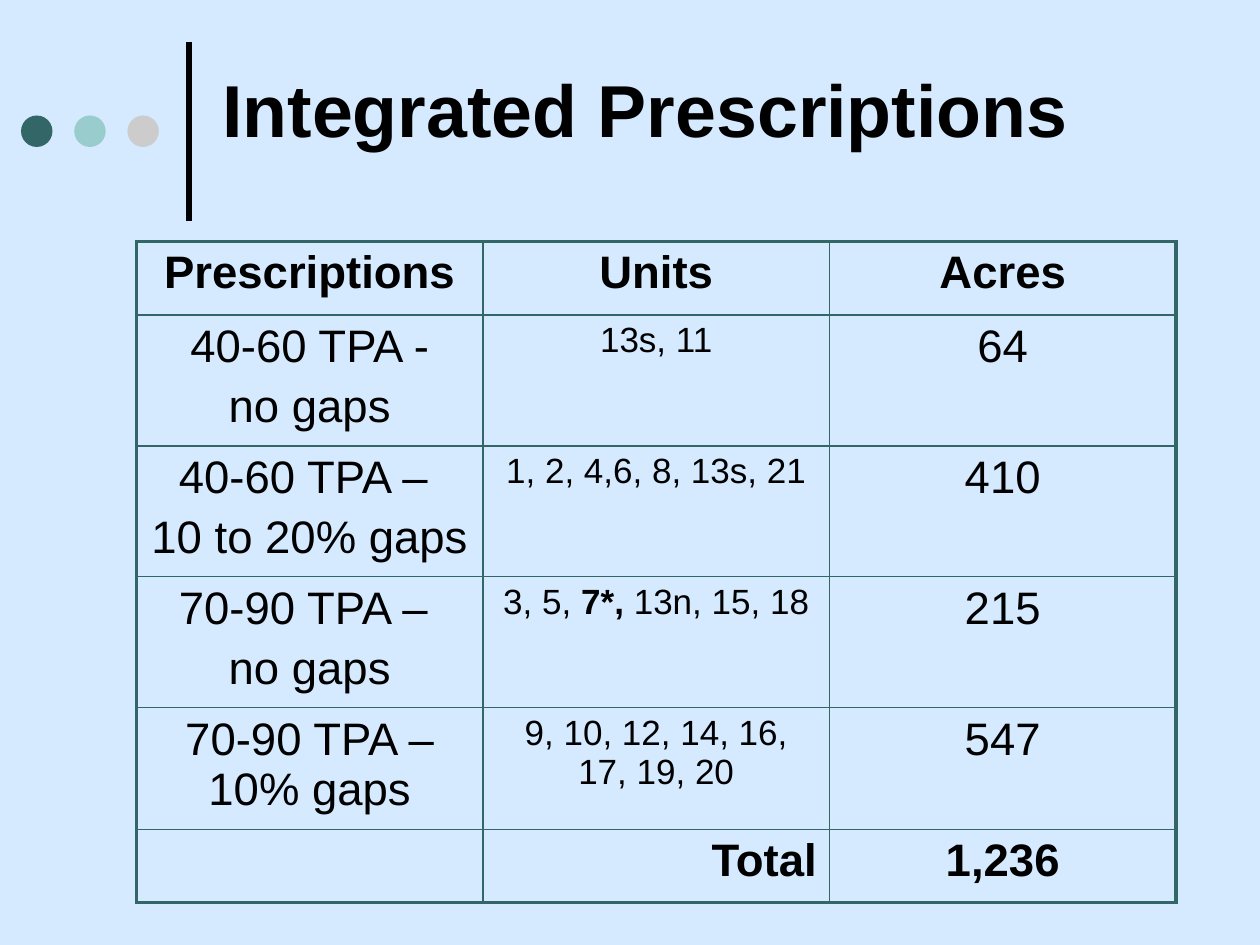
from typing import NamedTuple

from lxml.etree import SubElement
from pptx import Presentation
from pptx.dml.color import RGBColor
from pptx.enum.shapes import MSO_CONNECTOR, MSO_SHAPE
from pptx.enum.text import MSO_ANCHOR, PP_ALIGN
from pptx.oxml.ns import qn
from pptx.util import Pt

BLACK, TEAL, MINT, GREY, SKY = "000000", "336666", "99CCCC", "CCCCCC", "D5EAFF"
FONT = "Arial"
OUTER, INNER = 2.25, 1


class Run(NamedTuple):
    text: str
    bold: bool = False


class Cell(NamedTuple):
    paragraphs: list[list[Run]]
    size: float = 26
    align: PP_ALIGN = PP_ALIGN.CENTER


class Row(NamedTuple):
    height: float
    cells: list[Cell]


def label(*lines: str, bold: bool = False, align: PP_ALIGN = PP_ALIGN.CENTER) -> Cell:
    return Cell([[Run(line, bold)] for line in lines], align=align)


def units(*runs: Run) -> Cell:
    return Cell([list(runs)], size=20)


ROWS = [
    Row(42, [label(name, bold=True) for name in ("Prescriptions", "Units", "Acres")]),
    Row(54, [label("40-60 TPA -", "no gaps"), units(Run("13s, 11")), label("64")]),
    Row(54, [label("40-60 TPA – ", "10 to 20% gaps"),
             units(Run("1, 2, 4,6, 8, 13s, 21")), label("410")]),
    Row(54, [label("70-90 TPA – ", "no gaps"),
             units(Run("3, 5, "), Run("7*,", True), Run(" 13n, 15, 18")), label("215")]),
    Row(54, [label("70-90 TPA – 10% gaps"),
             units(Run("9, 10, 12, 14, 16, 17, 19, 20")), label("547")]),
    Row(42, [label(""), label("Total", bold=True, align=PP_ALIGN.RIGHT),
             label("1,236", bold=True)]),
]


def rgb(value: str) -> RGBColor:
    return RGBColor.from_string(value)


def style_run(r, size: float, bold: bool) -> None:
    r.font.name = FONT
    r.font.size = Pt(size)
    r.font.bold = bold
    r.font.color.rgb = rgb(BLACK)


def add_rule(s, x: float, top: float, bottom: float) -> None:
    line = s.shapes.add_connector(MSO_CONNECTOR.STRAIGHT, Pt(x), Pt(bottom), Pt(x), Pt(top))
    line.line.color.rgb = rgb(BLACK)
    line.line.width = Pt(3)
    SubElement(line._element.spPr, qn("a:effectLst"))


def add_dot(s, x: float, y: float, size: float, color: str) -> None:
    sp = s.shapes.add_shape(MSO_SHAPE.OVAL, Pt(x), Pt(y), Pt(size), Pt(size))
    sp.shadow.inherit = False
    sp.fill.solid()
    sp.fill.fore_color.rgb = rgb(color)
    sp.line.fill.background()


def add_title(s, text: str) -> None:
    tf = s.shapes.add_textbox(Pt(120), Pt(15), Pt(552), Pt(93)).text_frame
    tf.word_wrap = True
    tf.vertical_anchor = MSO_ANCHOR.MIDDLE
    tf.text = text
    style_run(tf.paragraphs[0].runs[0], 42, True)


def set_borders(cell, widths: dict[str, float]) -> None:
    """Draw the cell's edges; widths maps L, R, T and B, in that order, to points."""
    tc_pr = cell._tc.get_or_add_tcPr()
    for side, width in widths.items():
        ln = SubElement(tc_pr, qn(f"a:ln{side}"), w=str(Pt(width)))
        fill = SubElement(ln, qn("a:solidFill"))
        SubElement(fill, qn("a:srgbClr"), val=TEAL)


def fill_cell(cell, content: Cell) -> None:
    tf = cell.text_frame
    for i, runs in enumerate(content.paragraphs):
        p = tf.add_paragraph() if i else tf.paragraphs[0]
        p.alignment = content.align
        p.font.size = Pt(content.size)
        if i:
            p.space_before = Pt(0.2 * content.size)
        for run in runs:
            if run.text:
                r = p.add_run()
                r.text = run.text
                style_run(r, content.size, run.bold)


def add_prescription_table(s, rows: list[Row]) -> None:
    n_rows, n_cols = len(rows), len(rows[0].cells)
    col_width = 198
    table = s.shapes.add_table(n_rows, n_cols, Pt(78), Pt(138), Pt(n_cols * col_width),
                               Pt(sum(row.height for row in rows))).table
    table.first_row = table.horz_banding = False
    for column in table.columns:
        column.width = Pt(col_width)
    for i, row in enumerate(rows):
        table.rows[i].height = Pt(row.height)
        for j, content in enumerate(row.cells):
            cell = table.cell(i, j)
            fill_cell(cell, content)
            on_edge = {"L": j == 0, "R": j == n_cols - 1, "T": i == 0, "B": i == n_rows - 1}
            set_borders(cell, {side: OUTER if edge else INNER
                               for side, edge in on_edge.items()})
            cell.fill.background()


def main() -> None:
    prs = Presentation()
    prs.slide_width, prs.slide_height = Pt(720), Pt(540)
    s = prs.slides.add_slide(prs.slide_layouts[6])
    s.background.fill.solid()
    s.background.fill.fore_color.rgb = rgb(SKY)

    add_rule(s, 108, 24, 126)
    for i, color in enumerate((TEAL, MINT, GREY)):
        add_dot(s, 12 + 30.4 * i, 66, 18, color)
    add_title(s, "Integrated Prescriptions")
    add_prescription_table(s, ROWS)
    prs.save("out.pptx")


if __name__ == "__main__":
    main()
